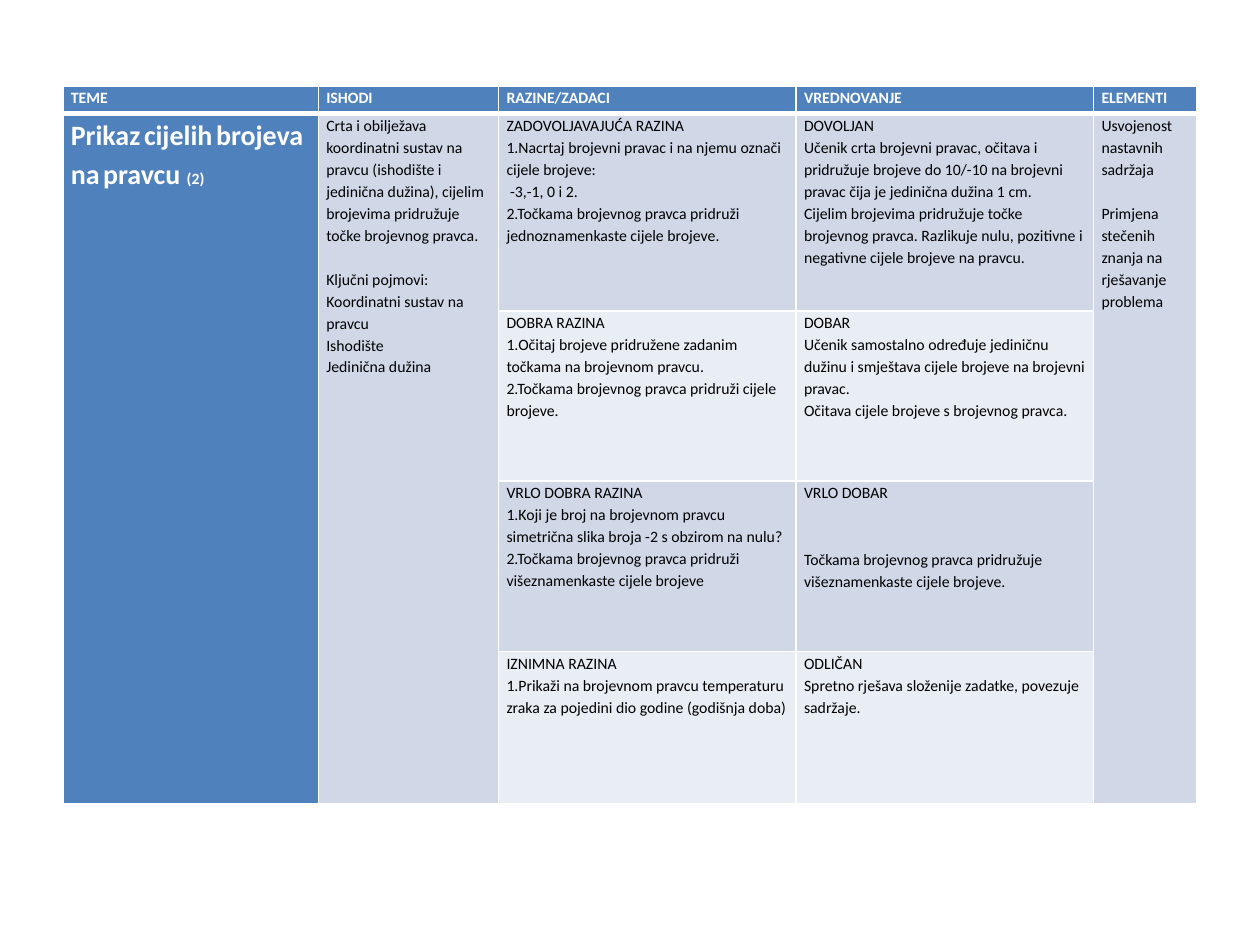
from lxml import etree
from pptx import Presentation
from pptx import util as u
from pptx.dml.color import RGBColor
from pptx.enum import text
from pptx.oxml import ns

Pt = u.Pt
WHITE = RGBColor(0xFF, 0xFF, 0xFF)
BLACK = RGBColor(0x00, 0x00, 0x00)
BLUE = RGBColor(0x4F, 0x81, 0xBD)
BAND_DARK = RGBColor(0xD0, 0xD8, 0xE8)
BAND_LIGHT = RGBColor(0xE9, 0xED, 0xF4)

FONT = "Calibri"
BODY_SIZE = 9
TITLE_SIZE = 16
LINE_SPACING = 1.15
LINE_GAP = 12.6  # height of one body line

COLUMN_WIDTHS = [146, 103, 170, 170, 59]
ROW_HEIGHTS = [15.8, 113, 97.2, 97.2, 87]

HEADINGS = ["TEME", "ISHODI", "RAZINE/ZADACI", "VREDNOVANJE", "ELEMENTI"]
TOPIC = ["Prikaz", "cijelih", "brojeva", "na", "pravcu"]

# A paragraph is a text, or a text with the number of lines left free above it
OUTCOMES = [
    "Crta i obilježava koordinatni sustav na pravcu (ishodište i jedinična dužina), "
    "cijelim brojevima pridružuje točke brojevnog pravca.",
    ("Ključni pojmovi:", 1),
    "Koordinatni sustav na pravcu",
    "Ishodište",
    "Jedinična dužina",
]
ELEMENTS = [
    "Usvojenost nastavnih sadržaja",
    ("Primjena stečenih znanja na rješavanje problema", 1),
]

# Each level: tasks, grading
LEVELS = [
    (["ZADOVOLJAVAJUĆA RAZINA",
      "1.Nacrtaj brojevni pravac i na njemu označi cijele brojeve:",
      " -3,-1, 0 i 2.",
      "2.Točkama brojevnog pravca pridruži jednoznamenkaste cijele brojeve."],
     ["DOVOLJAN",
      "Učenik crta brojevni pravac, očitava i pridružuje brojeve do 10/-10 "
      "na brojevni pravac čija je jedinična dužina 1 cm.",
      "Cijelim brojevima pridružuje točke brojevnog pravca. Razlikuje nulu, "
      "pozitivne i negativne cijele brojeve na pravcu."]),
    (["DOBRA RAZINA",
      "1.Očitaj brojeve pridružene zadanim točkama na brojevnom pravcu.",
      "2.Točkama brojevnog pravca pridruži cijele brojeve."],
     ["DOBAR",
      "Učenik samostalno određuje jediničnu dužinu i smještava cijele brojeve "
      "na brojevni pravac.",
      "Očitava cijele brojeve s brojevnog pravca."]),
    (["VRLO DOBRA RAZINA",
      "1.Koji je broj na brojevnom pravcu simetrična slika broja -2 s obzirom na nulu?",
      "2.Točkama brojevnog pravca pridruži višeznamenkaste cijele brojeve"],
     ["VRLO DOBAR",
      ("Točkama brojevnog pravca pridružuje višeznamenkaste cijele brojeve.", 2)]),
    (["IZNIMNA RAZINA",
      "1.Prikaži na brojevnom pravcu temperaturu zraka za pojedini dio godine "
      "(godišnja doba)"],
     ["ODLIČAN",
      "Spretno rješava složenije zadatke, povezuje sadržaje."]),
]


def add_span(para, words, size=BODY_SIZE, color=BLACK, bold=False):
    span = para.add_run()
    span.text = words
    span.font.name = FONT
    span.font.size = Pt(size)
    span.font.bold = bold
    span.font.color.rgb = color


def add_border(cell, side, width):
    line = etree.SubElement(cell._tc.get_or_add_tcPr(), ns.qn(f"a:ln{side}"),
                            w=str(Pt(width)))
    fill = etree.SubElement(line, ns.qn("a:solidFill"))
    etree.SubElement(fill, ns.qn("a:srgbClr"), val=str(WHITE))


class PageBuilder:
    def __init__(self, deck):
        self.page = deck.slides.add_slide(deck.slide_layouts[6])

    def table(self, left, top, widths, heights):
        frame = self.page.shapes.add_table(len(heights), len(widths), Pt(left), Pt(top),
                                           Pt(sum(widths)), Pt(sum(heights)))
        table = frame.table
        table.horz_banding = False
        for column, width in zip(table.columns, widths):
            column.width = Pt(width)
        for row, height in zip(table.rows, heights):
            row.height = Pt(height)
        return table

    def cell(self, table, row, column, fill):
        cell = table.cell(row, column)
        # Borders come before the fill; the header has a thick rule below it
        widths = {"L": 1, "R": 1, "T": 3 if row == 1 else 1, "B": 3 if row == 0 else 1}
        for side, width in widths.items():
            add_border(cell, side, width)
        cell.fill.solid()
        cell.fill.fore_color.rgb = fill
        cell.margin_left = cell.margin_right = Pt(4.5)
        cell.margin_top = cell.margin_bottom = 0
        cell.vertical_anchor = text.MSO_ANCHOR.TOP
        return cell

    def paragraphs(self, cell, items, **style):
        frame = cell.text_frame
        for index, item in enumerate(items):
            words, gap = (item, 0) if isinstance(item, str) else item
            para = frame.add_paragraph() if index else frame.paragraphs[0]
            para.line_spacing = LINE_SPACING
            para.space_before = Pt(gap * LINE_GAP)
            add_span(para, words, **style)

    def topic(self, cell, words, note):
        para = cell.text_frame.paragraphs[0]
        para.line_spacing = LINE_SPACING
        style = {"color": WHITE, "bold": True}
        for word in words[:-1]:
            add_span(para, word, size=TITLE_SIZE, **style)
            add_span(para, " ", **style)
        add_span(para, words[-1] + " ", size=TITLE_SIZE, **style)
        add_span(para, note, **style)


def main():
    deck = Presentation()
    deck.slide_width, deck.slide_height = Pt(720), Pt(540)
    builder = PageBuilder(deck)
    table = builder.table(36, 49, COLUMN_WIDTHS, ROW_HEIGHTS)

    # Header row
    for column, heading in enumerate(HEADINGS):
        cell = builder.cell(table, 0, column, BLUE)
        builder.paragraphs(cell, [heading], color=WHITE, bold=True)

    # Levels in alternating bands
    for row, level in enumerate(LEVELS, start=1):
        band = BAND_DARK if row % 2 else BAND_LIGHT
        for column, items in enumerate(level, start=2):
            builder.paragraphs(builder.cell(table, row, column, band), items)

    # Columns that span all levels
    last_row = len(LEVELS)
    for column, fill in ((0, BLUE), (1, BAND_DARK), (4, BAND_DARK)):
        for row in range(1, last_row + 1):
            builder.cell(table, row, column, fill)
        table.cell(1, column).merge(table.cell(last_row, column))
    builder.topic(table.cell(1, 0), TOPIC, "(2)")
    builder.paragraphs(table.cell(1, 1), OUTCOMES)
    builder.paragraphs(table.cell(1, 4), ELEMENTS)

    deck.save("out.pptx")


if __name__ == "__main__":
    main()
